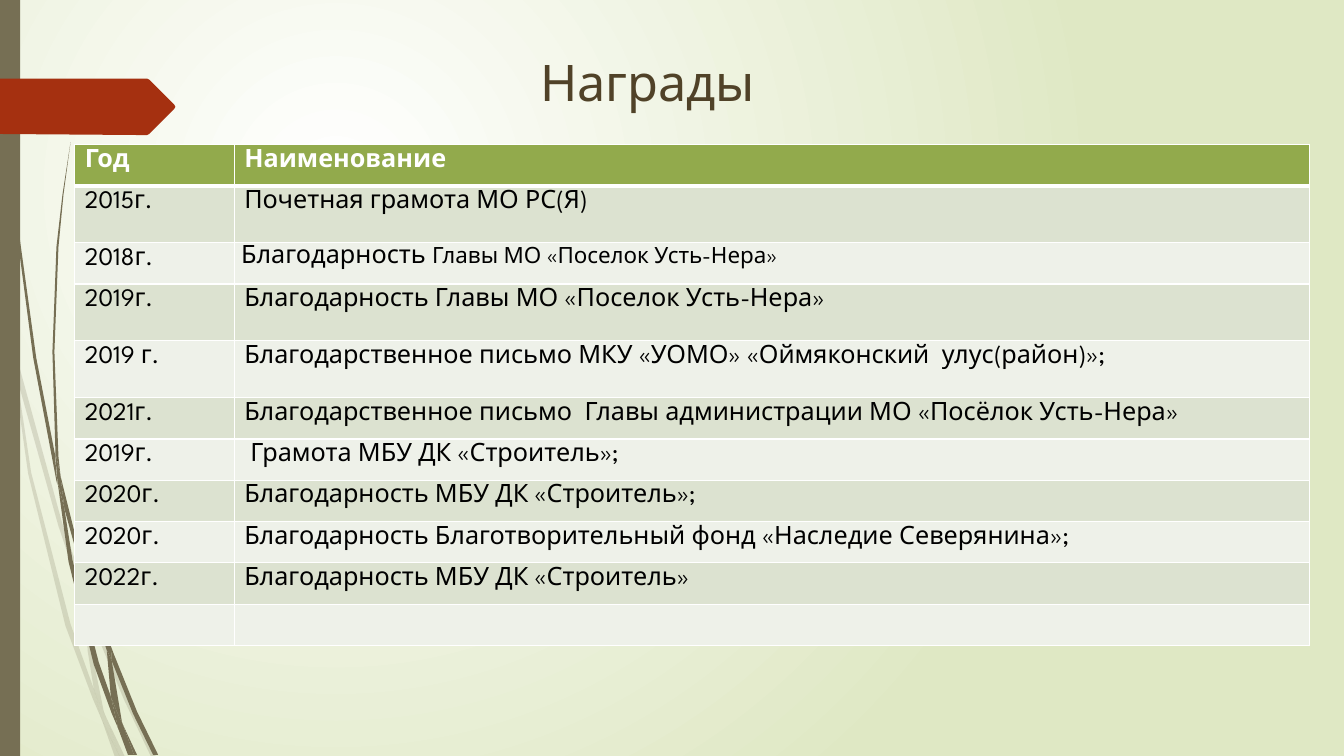
from dataclasses import dataclass

from lxml import etree
from pptx import Presentation
from pptx.dml.color import RGBColor
from pptx.enum.shapes import MSO_SHAPE
from pptx.enum.text import MSO_ANCHOR, PP_ALIGN
from pptx.oxml.ns import qn
from pptx.util import Pt

RECT = MSO_SHAPE.RECTANGLE
TOP = MSO_ANCHOR.TOP
MID = PP_ALIGN.CENTER
FONT = "League Spartan"
COLORS = {
    "glow": "FFFFFF", "field": "DFE8C4", "grass": "766F54", "arrow": "A53010",
    "title": "504228", "head": "92AA4C", "odd": "DCE2D0", "even": "EEF1E9",
    "white": "FFFFFF", "black": "000000",
}
GRID = Pt(0.72)  # unit of the outline points
LOW, TALL = 29.52, 40.6  # row heights


@dataclass
class Blade:
    points: list[tuple[int, int]]
    color: str = "grass"
    alpha: int = 100


@dataclass
class Award:
    year: str
    runs: list[tuple[str, int]]
    height: float = LOW
    loose: bool = False


# Grass outlines, pale strands first
PALE = [
    [(11, 350), (9, 322), (0, 282), (0, 299), (10, 344)],
    [(58, 522), (84, 599), (85, 586), (62, 520), (14, 345), (17, 376)],
    [(92, 607), (88, 596), (88, 610), (123, 694), (150, 751), (155, 751), (127, 692)],
    [(119, 751), (124, 751), (105, 711)],
    [(93, 683), (70, 619), (31, 469), (17, 376), (11, 350), (28, 470), (65, 621),
     (92, 693), (101, 714), (99, 707)],
    [(84, 599), (87, 646), (93, 683), (96, 692), (105, 711), (103, 706), (91, 646),
     (88, 610), (88, 608)],
    [(88, 584), (92, 522), (110, 462), (133, 403), (160, 349), (193, 296), (229, 245),
     (268, 198), (290, 175), (312, 154), (312, 153), (289, 175), (268, 197), (228, 244),
     (191, 295), (158, 348), (130, 402), (107, 461), (89, 522), (85, 584), (85, 586),
     (88, 596)],
    [(101, 714), (114, 751), (119, 751)],
    [(88, 608), (88, 610), (88, 596), (85, 586), (84, 599)],
    [(96, 692), (93, 683), (99, 707), (101, 714), (119, 751), (105, 711)],
]
DARK = [
    [(7, 110), (17, 233), (33, 355), (56, 477), (57, 481), (55, 457), (55, 453),
     (36, 355), (19, 232), (8, 109), (5, 48), (4, 0), (3, 0), (4, 48)],
    [(88, 592), (106, 645), (106, 631), (93, 590), (75, 532), (60, 472), (64, 505)],
    [(113, 649), (110, 641), (111, 656), (132, 708), (152, 749), (157, 749), (136, 706)],
    [(110, 691), (98, 657), (72, 556), (64, 505), (57, 477), (68, 557), (93, 659),
     (111, 708), (117, 722), (116, 717)],
    [(60, 472), (58, 453), (54, 349), (58, 245), (63, 193), (70, 141), (62, 193),
     (56, 245), (52, 349), (55, 449)],
    [(133, 749), (136, 749), (122, 719)],
    [(57, 477), (64, 505), (60, 472), (55, 449), (55, 453)],
    [(111, 633), (115, 592), (125, 552), (140, 513), (158, 476), (205, 406), (231, 374),
     (245, 359), (261, 344), (260, 344), (245, 358), (231, 373), (204, 405), (156, 474),
     (137, 512), (122, 551), (111, 591), (106, 631), (110, 641)],
    [(117, 722), (127, 749), (131, 749)],
    [(106, 645), (110, 691), (116, 706), (122, 719), (121, 716), (111, 656), (109, 651)],
    [(106, 645), (109, 651), (111, 656), (110, 641), (106, 631)],
    [(116, 706), (110, 691), (116, 717), (117, 722), (130, 749), (133, 749), (122, 719)],
]
ARROW = [(173, 108), (148, 133), (146, 134), (136, 134), (0, 133), (0, 78), (146, 78),
         (148, 79), (173, 104), (174, 106)]

AWARDS = [
    Award("Год", [("Наименование", 18)]),
    Award("2015г.", [("Почетная грамота МО РС(Я)", 18)], TALL),
    Award("2018г.", [("Благодарность ", 18), ("Главы МО «Поселок Усть-Нера»", 16)], loose=True),
    Award("2019г.", [("Благодарность Главы МО «Поселок Усть-Нера»", 18)], TALL),
    Award("2019 г.", [("Благодарственное письмо МКУ «УОМО» «Оймяконский  улус(район)»;", 18)], TALL),
    Award("2021г.", [("Благодарственное письмо  Главы администрации МО «Посёлок Усть-Нера»", 18)]),
    Award("2019г.", [(" Грамота МБУ ДК «Строитель»;", 18)]),
    Award("2020г.", [("Благодарность МБУ ДК «Строитель»;", 18)]),
    Award("2020г.", [("Благодарность Благотворительный фонд «Наследие Северянина»;", 18)]),
    Award("2022г.", [("Благодарность МБУ ДК «Строитель»", 18)]),
    Award("", []),
]


def shade(name: str) -> RGBColor:
    return RGBColor.from_string(COLORS[name])


def put(item, values: dict) -> None:
    for key, value in values.items():
        setattr(item, key, value)


def paint(shape, color: str) -> None:
    shape.shadow.inherit = False
    shape.fill.solid()
    shape.fill.fore_color.rgb = shade(color)
    shape.line.fill.background()


def write(para, text: str, size: int, color: str, bold: bool = False) -> None:
    run = para.add_run()
    run.text = text
    put(run.font, {"name": FONT, "size": Pt(size), "bold": bold})
    run.font.color.rgb = shade(color)


def draw(slide, blade: Blade) -> None:
    pen = slide.shapes.build_freeform(*blade.points[0], scale=GRID)
    pen.add_line_segments(blade.points[1:], close=True)
    shape = pen.convert_to_shape()
    paint(shape, blade.color)
    if blade.alpha < 100:
        tint = shape.fill._xPr.find(".//" + qn("a:srgbClr"))
        etree.SubElement(tint, qn("a:alpha"), val=str(blade.alpha * 1000))


def frame(cell, widths: dict[str, int]) -> None:
    props = cell._tc.get_or_add_tcPr()
    for spot, (side, width) in enumerate(widths.items()):
        line = etree.Element(qn("a:ln" + side), w=str(Pt(width)))
        fill = etree.SubElement(line, qn("a:solidFill"))
        etree.SubElement(fill, qn("a:srgbClr"), val=COLORS["white"])
        props.insert(spot, line)


def glow(slide) -> None:
    fill = slide.background.fill
    fill.gradient()
    for stop, name, place in zip(fill.gradient_stops, ("glow", "field"), (0, 1)):
        stop.color.rgb = shade(name)
        stop.position = place
    grad = slide.background._cSld.find(".//" + qn("a:gradFill"))
    line = grad.find(qn("a:lin"))
    ring = etree.Element(qn("a:path"), {"path": "circle"})
    etree.SubElement(ring, qn("a:fillToRect"), l="50000", t="50000", r="100000", b="100000")
    grad.replace(line, ring)


def chart(slide, awards: list[Award]) -> None:
    high = sum(award.height for award in awards)
    table = slide.shapes.add_table(
        len(awards), 2, Pt(53.5), Pt(103.2), Pt(882), Pt(high)).table
    for col, width in zip(table.columns, (113.8, 768.2)):
        col.width = Pt(width)
    for num, award in enumerate(awards):
        table.rows[num].height = Pt(award.height)
        back = "head" if num == 0 else "odd" if num % 2 else "even"
        ink = "black" if num else "white"
        years = [(award.year, 18)] if award.year else []
        for col, runs in enumerate((years, award.runs)):
            cell = table.cell(num, col)
            frame(cell, {"L": 1, "R": 1, "T": 1 if num != 1 else 3, "B": 1 if num else 3})
            cell.fill.solid()
            cell.fill.fore_color.rgb = shade(back)
            para = cell.text_frame.paragraphs[0]
            for text, size in runs:
                write(para, text, size, ink, num == 0)
            if award.loose and col:
                put(cell, {"margin_left": Pt(5.04), "margin_right": Pt(5.04),
                           "margin_top": 0, "margin_bottom": 0})
                put(para, {"line_spacing": 1.15, "space_after": Pt(10)})


def main() -> None:
    deck = Presentation()
    put(deck, {"slide_width": Pt(960), "slide_height": Pt(540)})
    slide = deck.slides.add_slide(deck.slide_layouts[6])
    glow(slide)

    # Grass, side bar and arrow
    for points in PALE:
        draw(slide, Blade(points, alpha=20))
    for points in DARK:
        draw(slide, Blade(points))
    bar = slide.shapes.add_shape(RECT, 0, 0, Pt(14.4), Pt(540))
    paint(bar, "grass")
    draw(slide, Blade(ARROW, "arrow"))

    # Title
    box = slide.shapes.add_textbox(Pt(111.6), Pt(33.1), Pt(702), Pt(100.8))
    put(box.text_frame, {"word_wrap": True, "vertical_anchor": TOP})
    para = box.text_frame.paragraphs[0]
    para.alignment = MID
    write(para, "Награды", 36, "title")

    # Awards
    chart(slide, AWARDS)
    deck.save("out.pptx")


if __name__ == "__main__":
    main()
